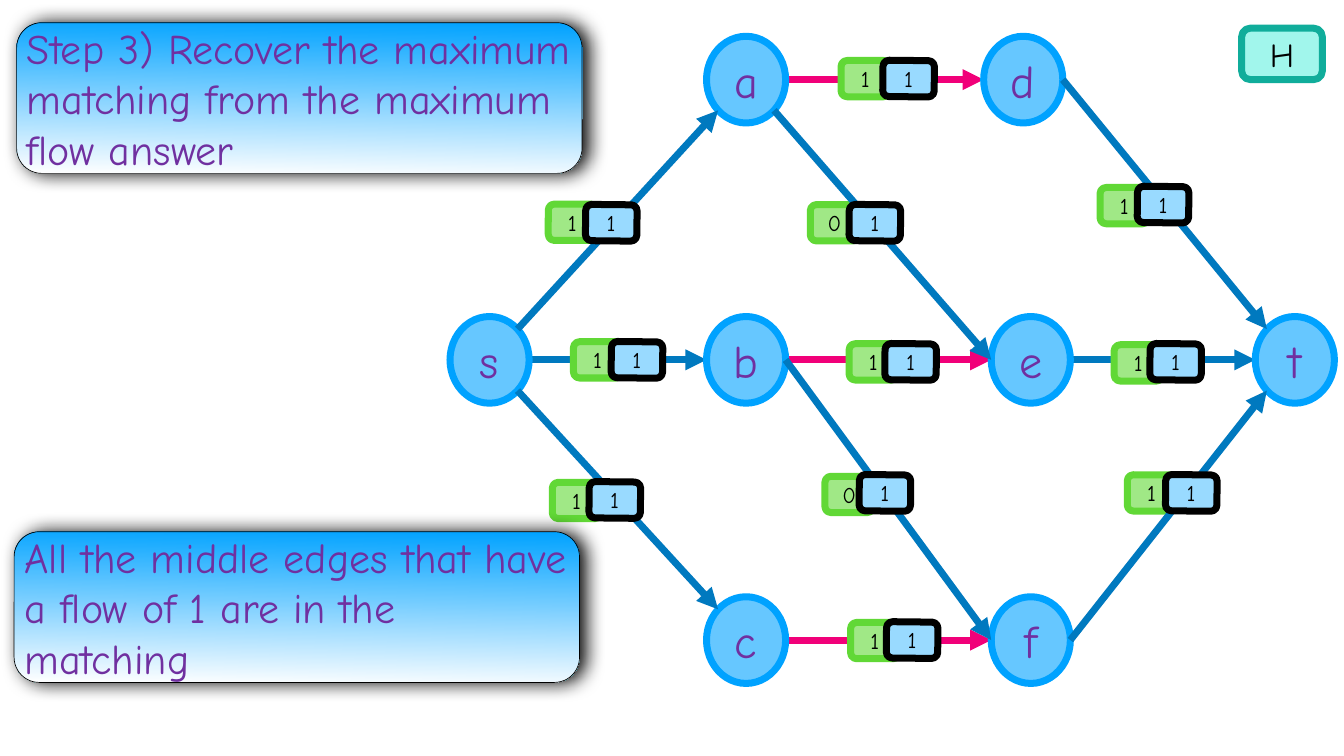
from dataclasses import dataclass
from math import hypot

from lxml.etree import SubElement
from pptx import Presentation
from pptx.dml.color import RGBColor as Rgb
from pptx.enum.shapes import MSO_CONNECTOR as Link, MSO_SHAPE as Kind
from pptx.enum.text import MSO_ANCHOR as Anchor, MSO_AUTO_SIZE as Fit, PP_ALIGN as Align
from pptx.oxml.ns import qn
from pptx.util import Emu, Pt

PX = 9144  # 100 px to the inch


@dataclass(frozen=True)
class Theme:
    font: str = "Comic Neue"
    ink: str = "000000"
    violet: str = "7030A0"
    blue: str = "0079BF"
    pink: str = "F10079"
    sky: str = "00A2FF"
    white: str = "FFFFFF"
    small: int = 32
    label: int = 48
    body: int = 60
    large: int = 66
    thin: int = 1
    thick: int = 10
    inset: int = 6


THEME = Theme()


@dataclass(frozen=True)
class Style:
    kind: Kind
    wide: int
    high: int
    fill: str | None
    line: str
    size: int
    ink: str = THEME.ink
    turn: float = 0
    weight: int = THEME.thick


NODE = Style(Kind.OVAL, 157, 172, "66C7FF", THEME.sky, THEME.large, THEME.violet)
FLOW = Style(Kind.ROUNDED_RECTANGLE, 96, 72, "A0E886", "61D836", THEME.small)
LIMIT = Style(Kind.ROUNDED_RECTANGLE, 102, 72, "99DAFF", THEME.ink, THEME.small, turn=0.6)
BADGE = Style(Kind.ROUNDED_RECTANGLE, 160, 102, "A1F6EC", "10AD9B", THEME.label)
NOTE = Style(Kind.ROUNDED_RECTANGLE, 1122, 299, None, THEME.ink, THEME.body,
             THEME.violet, weight=THEME.thin)

Point = tuple[int, int]
E, W, NE, NW, SE, SW = (1, 0), (-1, 0), (1, -1), (-1, -1), (1, 1), (-1, 1)


@dataclass(frozen=True)
class Edge:
    start: str
    leave: Point
    end: str
    enter: Point
    flow: int
    flow_at: Point
    limit_at: Point
    match: bool = False

    @property
    def level(self) -> bool:
        return self.leave == E and NODES[self.start][1] == NODES[self.end][1]


TOP, MID, LOW = (72 + 556 * row for row in range(3))
NODES: dict[str, Point] = {
    "a": (1402, TOP), "d": (1952, TOP),
    "s": (893, MID), "b": (1402, MID), "e": (1967, MID), "t": (2491, MID),
    "c": (1402, LOW), "f": (1967, LOW),
}
EDGES = [
    Edge("s", E, "b", W, 1, (1138, 678), (1213, 678)),
    Edge("a", E, "d", W, 1, (1669, 120), (1752, 120), True),
    Edge("e", E, "t", W, 1, (2211, 684), (2282, 682)),
    Edge("c", E, "f", W, 1, (1688, 1235), (1759, 1234), True),
    Edge("b", E, "e", W, 1, (1685, 682), (1756, 682), True),
    Edge("a", SE, "e", W, 0, (1608, 406), (1685, 406)),
    Edge("b", E, "f", W, 0, (1637, 945), (1705, 942)),
    Edge("s", NE, "a", SW, 1, (1088, 405), (1162, 406)),
    Edge("s", SE, "c", NW, 1, (1096, 957), (1169, 956)),
    Edge("d", E, "t", NW, 1, (2183, 372), (2257, 370)),
    Edge("f", E, "t", SW, 1, (2237, 942), (2313, 942)),
]
NOTES = [
    ("Step 3) Recover the maximum matching from the maximum flow answer", (33, 45)),
    ("All the middle edges that have a flow of 1 are in the matching", (28, 1055)),
]


def color(code: str) -> Rgb:
    return Rgb.from_string(code)


def draw(shapes, text: str, at: Point, style: Style):
    shape = shapes.add_shape(style.kind, *(Emu(n * PX) for n in (*at, style.wide, style.high)))
    shape.rotation = style.turn
    shape.shadow.inherit = False
    if style.fill:
        shape.fill.solid()
        shape.fill.fore_color.rgb = color(style.fill)
    shape.line.color.rgb = color(style.line)
    shape.line.width = Pt(style.weight)
    frame = shape.text_frame
    frame.word_wrap = True
    frame.vertical_anchor = Anchor.MIDDLE
    frame.margin_left = frame.margin_right = Emu(THEME.inset * PX)
    frame.margin_top = frame.margin_bottom = Emu(THEME.inset * PX)
    frame.text = text
    para = frame.paragraphs[0]
    para.alignment = Align.CENTER
    para.font.name = THEME.font
    para.font.size = Pt(style.size)
    para.font.color.rgb = color(style.ink)
    if style is not NOTE:
        frame.auto_size = Fit.SHAPE_TO_FIT_TEXT
    return shape


def add_note(shapes, text: str, at: Point) -> None:
    """Draw a left-aligned text panel with a gradient and a soft shadow."""
    shape = draw(shapes, text, at, NOTE)
    shape.text_frame.paragraphs[0].alignment = Align.LEFT
    shape.fill.gradient()
    shape.fill.gradient_angle = 269
    for stop, code, place in zip(shape.fill.gradient_stops, (THEME.sky, THEME.white), (0, 1)):
        stop.color.rgb = color(code)
        stop.position = place
    effects = shape._element.spPr.find(qn("a:effectLst"))
    shade = SubElement(effects, qn("a:outerShdw"), blurRad=str(Pt(28)), dist=str(Pt(9)),
                       dir="0", rotWithShape="0")
    tint = SubElement(shade, qn("a:srgbClr"), val=THEME.ink)
    SubElement(tint, qn("a:alpha"), val="97000")


def port(name: str, way: Point) -> list[Emu]:
    """Find the point on a node's rim that lies in the given direction."""
    left, top = NODES[name]
    span = 2 * hypot(*way)
    spot = (left + NODE.wide * (0.5 + way[0] / span), top + NODE.high * (0.5 + way[1] / span))
    return [Emu(round(n) * PX) for n in spot]


def add_arrow(shapes, edge: Edge) -> None:
    arrow = shapes.add_connector(Link.STRAIGHT, *port(edge.start, edge.leave),
                                 *port(edge.end, edge.enter))
    arrow.line.color.rgb = color(THEME.pink if edge.match else THEME.blue)
    arrow.line.width = Pt(THEME.thick)
    props = arrow._element.spPr
    SubElement(props.find(qn("a:ln")), qn("a:tailEnd"), type="triangle")
    SubElement(props, qn("a:effectLst"))


def main() -> None:
    deck = Presentation()
    deck.slide_width, deck.slide_height = Emu(2667 * PX), Emu(1500 * PX)
    shapes = deck.slides.add_slide(deck.slide_layouts[6]).shapes

    for edge in EDGES:
        if edge.level:
            add_arrow(shapes, edge)
    for edge in EDGES:
        draw(shapes, str(edge.flow), edge.flow_at, FLOW)
    for name, at in NODES.items():
        draw(shapes, name, at, NODE)
    for edge in EDGES:
        if not edge.level:
            add_arrow(shapes, edge)
    draw(shapes, "H", (2464, 56), BADGE)
    for edge in EDGES:
        draw(shapes, "1", edge.limit_at, LIMIT)
    for text, at in NOTES:
        add_note(shapes, text, at)
    deck.save("out.pptx")


if __name__ == "__main__":
    main()
